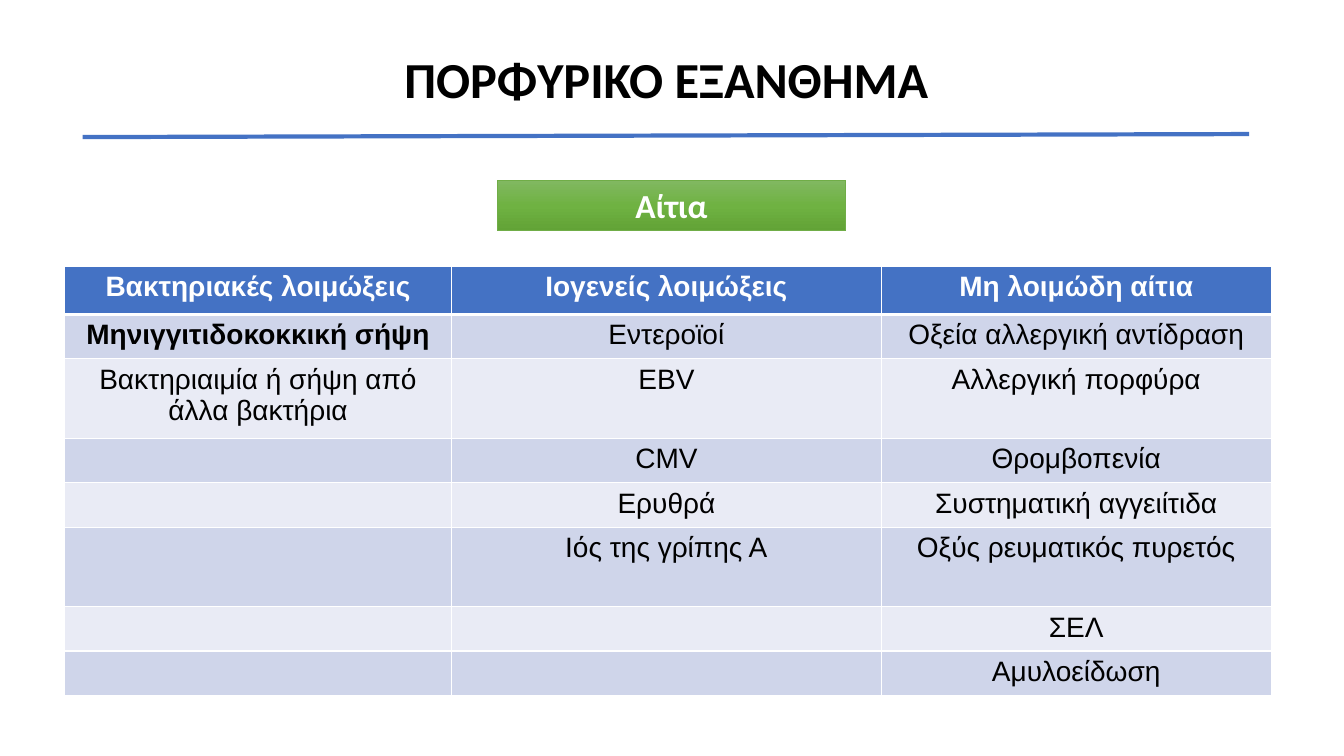
from lxml import etree
from pptx import Presentation
from pptx.dml.color import RGBColor
from pptx.enum import shapes, text
from pptx.oxml import ns
from pptx.util import Inches, Pt

TITLE = "ΠΟΡΦΥΡΙΚΟ ΕΞΑΝΘΗΜΑ"
LABEL = "Αίτια"
ROWS = [
    ("Βακτηριακές λοιμώξεις", "Ιογενείς λοιμώξεις", "Μη λοιμώδη αίτια"),
    ("Μηνιγγιτιδοκοκκική σήψη", "Εντεροϊοί", "Οξεία αλλεργική αντίδραση"),
    ("Βακτηριαιμία ή σήψη από άλλα βακτήρια", "EBV", "Αλλεργική πορφύρα"),
    ("", "CMV", "Θρομβοπενία"),
    ("", "Ερυθρά", "Συστηματική αγγειίτιδα"),
    ("", "Ιός της γρίπης Α", "Οξύς ρευματικός πυρετός"),
    ("", "", "ΣΕΛ"),
    ("", "", "Αμυλοείδωση"),
]
WIDTHS = [3.84, 4.26, 3.87]
HEIGHTS = [0.48, 0.44, 0.79, 0.44, 0.44, 0.79, 0.44, 0.44]
BOLD = {ROWS[1][0], *ROWS[0]}
HEX = {"black": "000000", "white": "FFFFFF", "blue": "4472C4",
       "dark": "CFD5EA", "light": "E9EBF5", "green": "70AD47"}
SHADES = [(0, "81B861"), (50, "6FB242"), (100, "62A336")]


def color(name):
    return RGBColor.from_string(HEX[name])


def add(parent, tag, **attrs):
    node = etree.SubElement(parent, ns.qn(tag))
    for key, value in attrs.items():
        node.set(key, str(value))
    return node


def write(frame, words, size, face, tint, bold=True):
    para = frame.paragraphs[0]
    para.alignment = text.PP_ALIGN.CENTER
    run = para.add_run()
    run.text = words
    run.font.size = Pt(size)
    run.font.name = face
    run.font.bold = bold
    run.font.color.rgb = color(tint)
    return para


def shade(shape):
    shape.fill.gradient()
    grad = shape._element.spPr.find(ns.qn("a:gradFill"))
    for child in list(grad):
        grad.remove(child)
    stops = add(grad, "a:gsLst")
    for place, tint in SHADES:
        stop = add(stops, "a:gs", pos=place * 1000)
        add(stop, "a:srgbClr", val=tint)
    add(grad, "a:lin", ang=90 * 60000, scaled=0)


def border(cell, row):
    props = cell._tc.get_or_add_tcPr()
    for side in "LRTB":
        thick = (row, side) in ((0, "B"), (1, "T"))
        line = add(props, "a:ln" + side, w=Pt(3 if thick else 1))
        add(add(line, "a:solidFill"), "a:srgbClr", val=HEX["white"])


deck = Presentation()
deck.slide_width, deck.slide_height = Inches(13.33), Inches(7.5)
slide = deck.slides.add_slide(deck.slide_layouts[6])

title = slide.shapes.add_textbox(
    Inches(0.86), Inches(0.09), Inches(11.5), Inches(1.45)).text_frame
title.word_wrap = True
title.vertical_anchor = text.MSO_ANCHOR.MIDDLE
write(title, TITLE, 36, "Calibri", "black").line_spacing = 0.9

label = slide.shapes.add_shape(
    shapes.MSO_SHAPE.RECTANGLE, Inches(4.93), Inches(1.79), Inches(3.46), Inches(0.5))
label.shadow.inherit = False
shade(label)
label.line.color.rgb = color("green")
label.line.width = Pt(0.5)
label.text_frame.vertical_anchor = text.MSO_ANCHOR.TOP
label.text_frame.auto_size = text.MSO_AUTO_SIZE.SHAPE_TO_FIT_TEXT
write(label.text_frame, LABEL, 24, "Calibri", "white")

rule = slide.shapes.add_connector(
    shapes.MSO_CONNECTOR.STRAIGHT, Inches(0.82), Inches(1.36), Inches(12.39), Inches(1.33))
rule.line.color.rgb = color("blue")
rule.line.width = Pt(3)
add(rule._element.spPr, "a:effectLst")

table = slide.shapes.add_table(
    len(ROWS), len(WIDTHS), Inches(0.64), Inches(2.64),
    Inches(sum(WIDTHS)), Inches(sum(HEIGHTS))).table
for column, width in zip(table.columns, WIDTHS):
    column.width = Inches(width)
for r, (words, height) in enumerate(zip(ROWS, HEIGHTS)):
    table.rows[r].height = Inches(height)
    for c, word in enumerate(words):
        cell = table.cell(r, c)
        border(cell, r)
        cell.fill.solid()
        band = "dark" if r % 2 else "light"
        cell.fill.fore_color.rgb = color(band if r else "blue")
        if word:
            write(cell.text_frame, word, 20, "Arial",
                  "black" if r else "white", word in BOLD)

deck.save("out.pptx")
